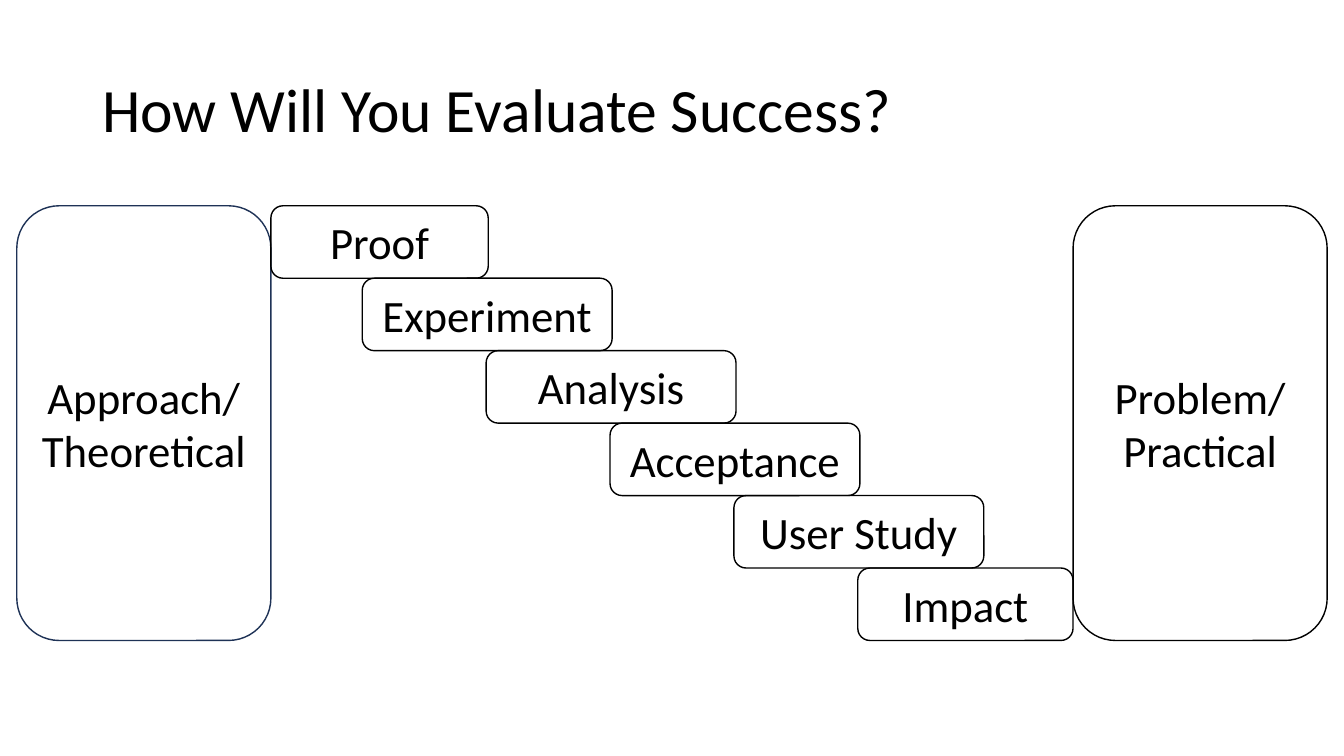
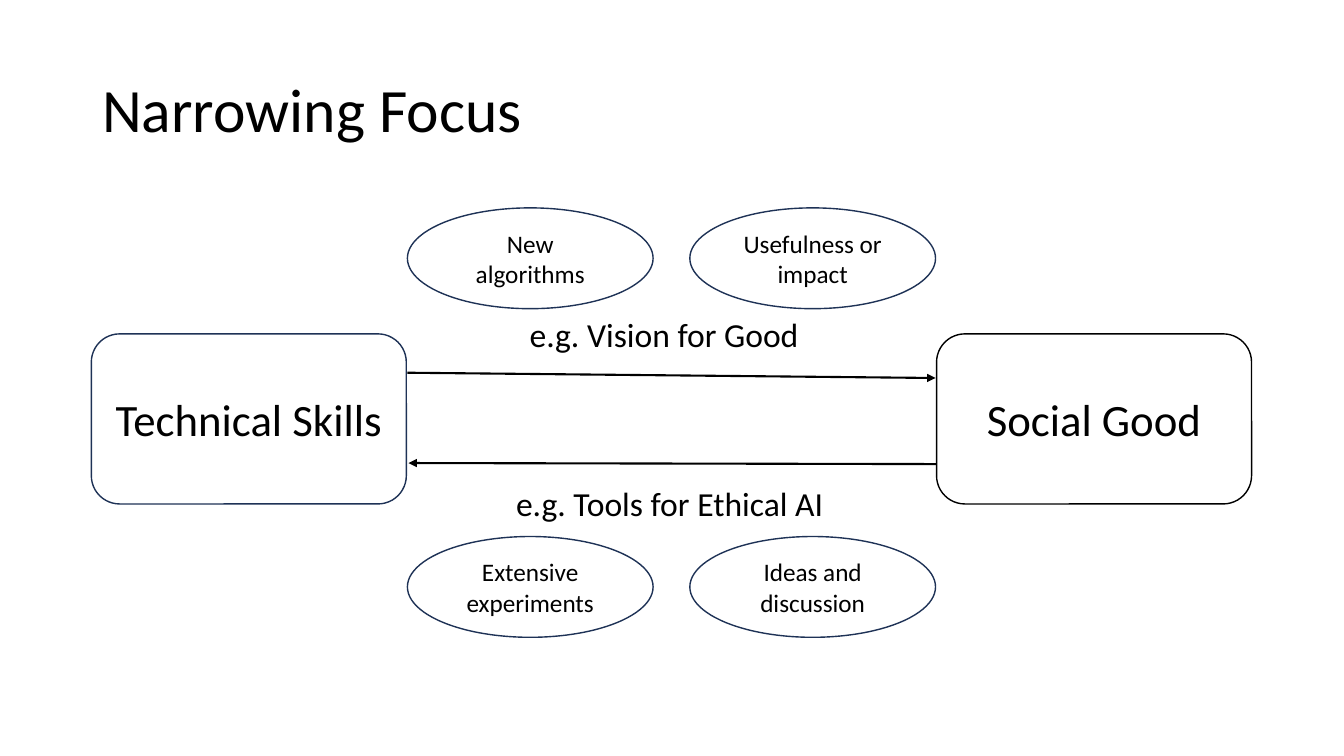
from dataclasses import dataclass

from lxml.etree import SubElement
from pptx import Presentation
from pptx.dml.color import RGBColor
from pptx.enum.shapes import MSO_CONNECTOR, MSO_SHAPE
from pptx.enum.text import MSO_ANCHOR, PP_ALIGN
from pptx.oxml.ns import qn
from pptx.slide import Slide
from pptx.text.text import TextFrame
from pptx.util import Emu, Pt

EMU_PER_PX = 9525
COLORS = {"ink": "000000", "navy": "1E3256"}
FONT = "Calibri"


@dataclass(frozen=True)
class Node:
    """An outlined shape with centred text, measured in px."""

    text: str
    left: int
    top: int
    width: int
    height: int
    outline: str = "ink"
    size: int = 32
    kind: MSO_SHAPE = MSO_SHAPE.ROUNDED_RECTANGLE


@dataclass(frozen=True)
class Label:
    """A plain text box, measured in px."""

    text: str
    left: int
    top: int
    width: int
    height: int


@dataclass(frozen=True)
class Arrow:
    """A straight arrow between two points, measured in px."""

    start_x: int
    start_y: int
    end_x: int
    end_y: int


def px(*lengths: int) -> list[Emu]:
    """Turn px lengths into EMU."""
    return [Emu(length * EMU_PER_PX) for length in lengths]


def color(name: str) -> RGBColor:
    """Look up a named colour."""
    return RGBColor.from_string(COLORS[name])


def write(frame: TextFrame, text: str, size: int, align: PP_ALIGN = PP_ALIGN.LEFT) -> None:
    """Fill a text frame, one paragraph for each line of the text."""
    frame.text = text
    for paragraph in frame.paragraphs:
        paragraph.alignment = align
        for span in paragraph.runs:
            span.font.name = FONT
            span.font.size = Pt(size)
            span.font.color.rgb = color("ink")


def add_page(deck: Presentation, title: str) -> Slide:
    """Add a blank slide with the shared title style."""
    page = deck.slides.add_slide(deck.slide_layouts[6])
    frame = page.shapes.add_textbox(*px(88, 38, 1104, 139)).text_frame
    frame.word_wrap = True
    frame.vertical_anchor = MSO_ANCHOR.MIDDLE
    write(frame, title, 44)
    frame.paragraphs[0].line_spacing = 0.9
    return page


def add_node(page: Slide, node: Node) -> None:
    """Draw an outlined shape with its text."""
    shape = page.shapes.add_shape(node.kind, *px(node.left, node.top, node.width, node.height))
    shape.shadow.inherit = False
    shape.fill.background()
    shape.line.color.rgb = color(node.outline)
    shape.line.width = Pt(1)
    shape.text_frame.word_wrap = True
    shape.text_frame.vertical_anchor = MSO_ANCHOR.MIDDLE
    write(shape.text_frame, node.text, node.size, PP_ALIGN.CENTER)


def add_label(page: Slide, label: Label) -> None:
    """Draw a text label."""
    box = page.shapes.add_textbox(*px(label.left, label.top, label.width, label.height))
    box.text_frame.word_wrap = False
    write(box.text_frame, label.text, 24)


def add_arrow(page: Slide, arrow: Arrow) -> None:
    """Draw a line with a triangle at its end."""
    line = page.shapes.add_connector(
        MSO_CONNECTOR.STRAIGHT, *px(arrow.start_x, arrow.start_y, arrow.end_x, arrow.end_y)
    )
    line.line.color.rgb = color("ink")
    line.line.width = Pt(1.5)
    SubElement(line.line._get_or_add_ln(), qn("a:tailEnd"), type="triangle")
    SubElement(line._element.spPr, qn("a:effectLst"))


def build_evaluation(deck: Presentation) -> None:
    """Build the staircase of methods between two panels."""
    page = add_page(deck, "How Will You Evaluate Success?")
    top, height, panel_width = 196, 414, 242
    theory_left, practice_left = 16, 1022
    add_node(page, Node("Approach/\nTheoretical", theory_left, top, panel_width, height, "navy"))
    add_node(page, Node("Problem/\nPractical", practice_left, top, panel_width, height))

    methods = ["Proof", "Experiment", "Analysis", "Acceptance", "User Study", "Impact"]
    step_height = height // len(methods)
    first_left, step_width, shift = 227, 238, 118
    for index, method in enumerate(methods):
        stair = first_left + index * shift
        left = max(stair, theory_left + panel_width)
        right = min(stair + step_width, practice_left)
        add_node(page, Node(method, left, top + index * step_height, right - left, step_height))


def build_focus(deck: Presentation) -> None:
    """Build the exchange between technical skills and social good."""
    page = add_page(deck, "Narrowing Focus")
    add_node(page, Node("Technical Skills", 87, 318, 300, 162, "navy"))
    add_node(page, Node("Social Good", 892, 318, 300, 162))
    for arrow in (Arrow(388, 355, 891, 360), Arrow(892, 442, 389, 441)):
        add_arrow(page, arrow)
    for label in (
        Label("e.g. Vision for Good", 495, 294, 288, 48),
        Label("e.g. Tools for Ethical AI", 482, 455, 316, 48),
    ):
        add_label(page, label)

    ideas = {
        198: ("New algorithms", "Usefulness or impact"),
        511: ("Extensive experiments", "Ideas and discussion"),
    }
    for top, pair in ideas.items():
        for left, text in zip((388, 657), pair):
            add_node(page, Node(text, left, top, 234, 96, "navy", 18, MSO_SHAPE.OVAL))


def main() -> None:
    """Build and save the deck."""
    deck = Presentation()
    deck.slide_width, deck.slide_height = px(1280, 720)
    build_evaluation(deck)
    build_focus(deck)
    deck.save("out.pptx")


if __name__ == "__main__":
    main()
